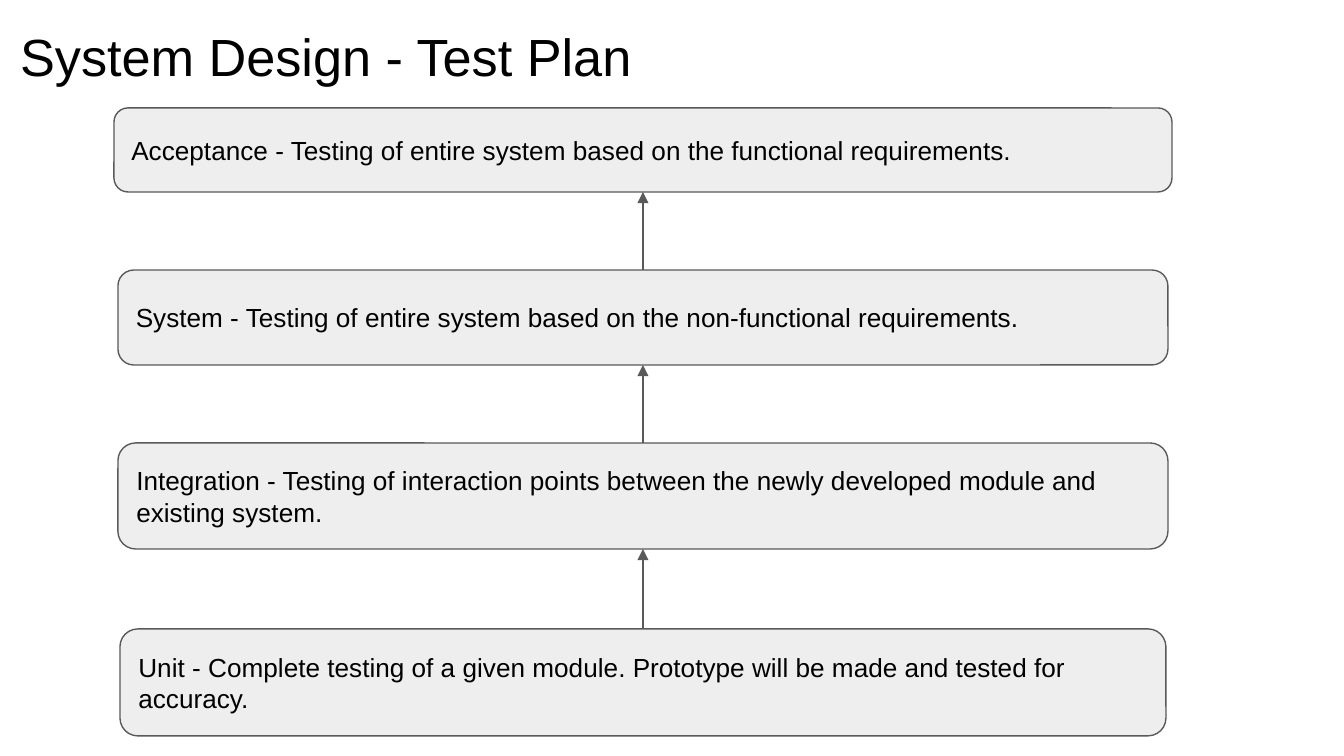
from lxml import etree
from pptx import Presentation, util as u
from pptx.dml.color import RGBColor
from pptx.enum import shapes, text
from pptx.oxml.ns import qn

BLACK = RGBColor(0x00, 0x00, 0x00)
GREY = RGBColor(0xEE, 0xEE, 0xEE)
DARK = RGBColor(0x59, 0x59, 0x59)

TITLE = "System Design - Test Plan"
# Test levels from top to bottom: text, top, width, height
LEVELS = [
    ("Acceptance - Testing of entire system based on the functional requirements.",
     108, 1058, 84),
    ("System - Testing of entire system based on the non-functional requirements.",
     270, 1050, 95),
    ("Integration - Testing of interaction points between the newly developed "
     "module and existing system.", 443, 1050, 106),
    ("Unit - Complete testing of a given module. Prototype will be made and "
     "tested for accuracy.", 629, 1046, 107),
]
MID = 643
PAD = u.Inches(0.1)


def px(n):
    return u.Emu(round(n * 914400 / 134.4))


def write(shape, words, size=14, anchor=text.MSO_ANCHOR.MIDDLE):
    frame = shape.text_frame
    frame.word_wrap = True
    frame.vertical_anchor = anchor
    frame.margin_left = frame.margin_right = PAD
    frame.margin_top = frame.margin_bottom = PAD
    para = frame.paragraphs[0]
    para.alignment = text.PP_ALIGN.LEFT
    run = para.add_run()
    run.text = words
    run.font.name = "Arial"
    run.font.size = u.Pt(size)
    run.font.color.rgb = BLACK


def stroke(line):
    line.color.rgb = DARK
    line.width = u.Pt(0.75)


def add_box(slide, words, top, wide, high):
    box = slide.shapes.add_shape(
        shapes.MSO_SHAPE.ROUNDED_RECTANGLE,
        px(MID - wide / 2), px(top), px(wide), px(high))
    box.shadow.inherit = False
    box.fill.solid()
    box.fill.fore_color.rgb = GREY
    stroke(box.line)
    write(box, words)
    return box


def add_arrow(slide, low, high):
    arrow = slide.shapes.add_connector(
        shapes.MSO_CONNECTOR.STRAIGHT, 0, 0, 0, 0)
    arrow.begin_connect(low, 0)
    arrow.end_connect(high, 2)
    stroke(arrow.line)
    props = arrow.line._get_or_add_ln()
    etree.SubElement(props, qn("a:tailEnd"), type="triangle")
    etree.SubElement(arrow._element.spPr, qn("a:effectLst"))


def main():
    deck = Presentation()
    deck.slide_width, deck.slide_height = px(1344), px(756)
    slide = deck.slides.add_slide(deck.slide_layouts[6])

    # Title
    head = slide.shapes.add_textbox(px(7), px(11), px(1253), px(85))
    write(head, TITLE, size=28, anchor=text.MSO_ANCHOR.TOP)

    # Levels, each with an arrow up to the one above
    boxes = [add_box(slide, *level) for level in LEVELS]
    for high, low in zip(boxes, boxes[1:]):
        add_arrow(slide, low, high)

    deck.save("out.pptx")


if __name__ == "__main__":
    main()
